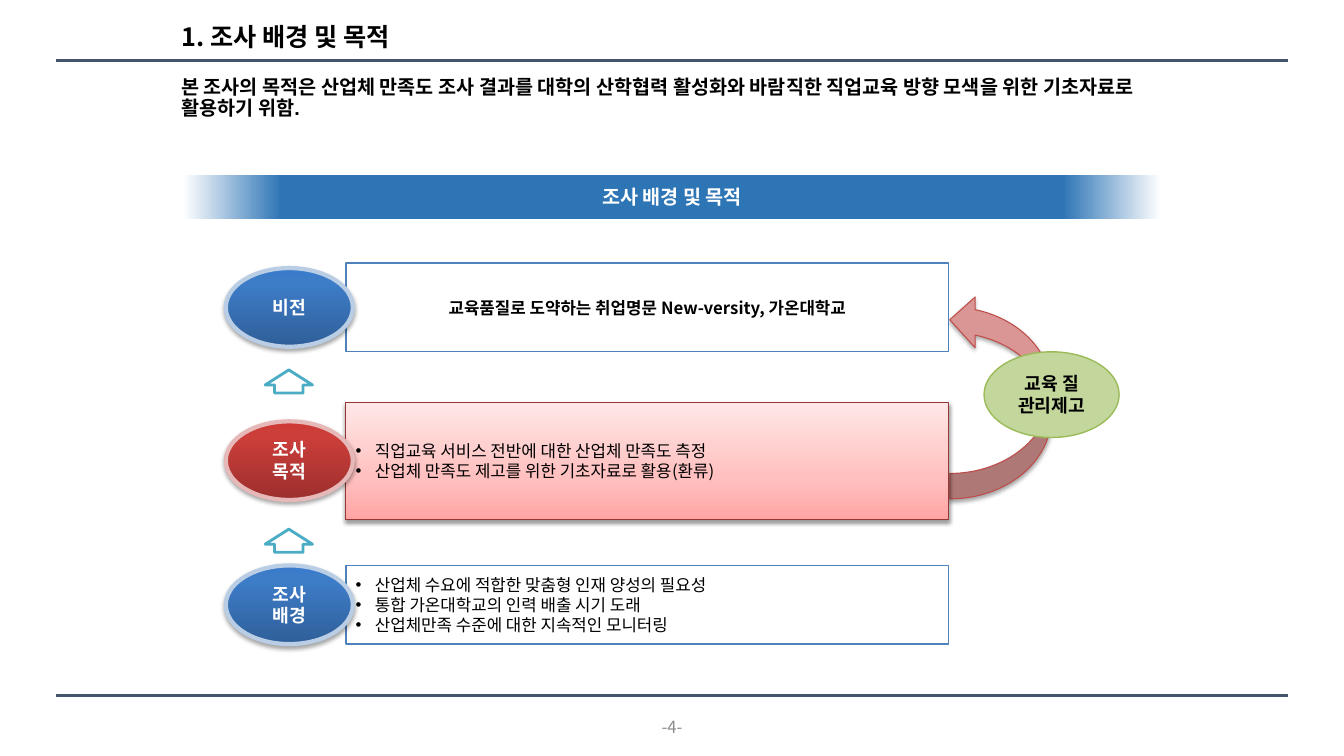
"""Build the survey background and purpose slide."""
from copy import deepcopy
from lxml import etree
from pptx import Presentation, util as u
from pptx.dml.color import RGBColor
from pptx.enum import shapes, text
from pptx.oxml.ns import qn

KIND = shapes.MSO_SHAPE
ALIGN = text.PP_ALIGN
MID = text.MSO_ANCHOR.MIDDLE
SANS = "Noto Sans CJK KR"
BLUE = "0:2F5F99 80:3D7CC7 100:3A7CCB"
RED = "0:9C2F2D 80:CB3E3A 100:CE3B37"
PINK = "0:FFA6A5 35:FFC0BF 100:FFE7E7"
FADE = "0:FFFFFF 10:2E75B6 90:2E75B6 100:FFFFFF"

deck = Presentation()
deck.slide_width, deck.slide_height = u.Inches(13.33), u.Inches(7.5)
col, row = deck.slide_width / 1333, deck.slide_height / 750
slide = deck.slides.add_slide(deck.slide_layouts[5])
items = slide.shapes


def paint(fill, hues, angle=90):
    """Fill with one hex colour, or with stops written as place:hex."""
    if ":" not in hues:
        fill.solid()
        fill.fore_color.rgb = RGBColor.from_string(hues)
        return
    fill.gradient()
    fill.gradient_angle = angle
    pairs = [stop.split(":") for stop in hues.split()]
    base = fill.gradient_stops[0]._gs
    for _ in pairs[2:]:
        base.addnext(deepcopy(base))
    for stop, (place, hue) in zip(fill.gradient_stops, pairs):
        stop.position = int(place) / 100
        stop.color.rgb = RGBColor.from_string(hue)


def write(frame, lines, size, hue="000000", bold=True, face=SANS,
          dots=False, **form):
    """Write one paragraph per line, with the given paragraph format."""
    for n, line in enumerate(lines):
        para = frame.add_paragraph() if n else frame.paragraphs[0]
        for key, value in form.items():
            setattr(para, key, value)
        run = para.add_run()
        run.text = line
        for key, value in dict(size=u.Pt(size), bold=bold, name=face).items():
            setattr(run.font, key, value)
        paint(run.font.fill, hue)
        etree.SubElement(run._r.rPr, qn("a:ea")).set("typeface", SANS)
        if dots:
            prop = para._p.get_or_add_pPr()
            prop.set("marL", str(u.Inches(0.19)))
            prop.set("indent", str(-u.Inches(0.19)))
            etree.SubElement(prop, qn("a:buFont")).set("typeface", "Arial")
            etree.SubElement(prop, qn("a:buChar")).set("char", "•")


for y in (60, 690):
    ends = [int(v) for v in (56 * col, y * row, 1277 * col, y * row)]
    rule = items.add_connector(shapes.MSO_CONNECTOR.STRAIGHT, *ends)
    paint(rule.line.fill, "44546A")
    rule.line.width = u.Pt(2)
    etree.SubElement(rule._element.spPr, qn("a:effectLst"))

title = items.title
body, page = [items.add_textbox(0, 0, 0, 0) for _ in range(2)]
places = [(title, (170, 20, 254, 37)), (body, (170, 72, 992, 53)),
          (page, (639, 706, 55, 30))]
for item, (x, y, w, h) in places:
    spots = dict(left=x * col, top=y * row, width=w * col, height=h * row)
    for key, value in spots.items():
        setattr(item, key, int(value))
    item.text_frame.word_wrap = item is not page
    item.text_frame.auto_size = text.MSO_AUTO_SIZE.NONE
title.text_frame.vertical_anchor = page.text_frame.vertical_anchor = MID
write(title.text_frame, ["1. 조사 배경 및 목적"], 18,
      alignment=ALIGN.LEFT, line_spacing=0.9)
write(body.text_frame, ["본 조사의 목적은 산업체 만족도 조사 결과를 대학의 산학협력 활성화와 "
      "바람직한 직업교육 방향 모색을 위한 기초자료로 활용하기 위함."], 14,
      face="Arial", line_spacing=0.9, space_after=u.Pt(3))
write(page.text_frame, ["-4-"], 12, "8C8C8C", False, alignment=ALIGN.CENTER)

center = dict(alignment=ALIGN.CENTER)
bullet = dict(size=12, bold=False, dots=True, alignment=ALIGN.LEFT)
label = dict(size=13, hue="FFFFFF", **center)
rows = [
    (261, 88, "FFFFFF", "4F81BD", 1, 0, BLUE, "B9CDE5", ["비전"],
     ["교육품질로 도약하는 취업명문 New-versity, 가온대학교"],
     dict(size=12, **center)),
    (399, 116, PINK, "953735", 0.75, 38, RED, "E6B9B8", ["조사", "목적"],
     ["직업교육 서비스 전반에 대한 산업체 만족도 측정",
      "산업체 만족도 제고를 위한 기초자료로 활용(환류)"], bullet),
    (561, 78, "FFFFFF", "4F81BD", 1, 0, BLUE, "B9CDE5", ["조사", "배경"],
     ["산업체 수요에 적합한 맞춤형 인재 양성의 필요성",
      "통합 가온대학교의 인력 배출 시기 도래",
      "산업체만족 수준에 대한 지속적인 모니터링"], bullet),
]
parts = [
    (KIND.CURVED_LEFT_ARROW, (942, 292, 101, 203), "D99694", "BF4C48", 0.75,
     35, [], {}),
    (KIND.OVAL, (976, 349, 134, 85), "C3D69B", "9BBB59", 1, 0,
     ["교육 질 관리제고"], dict(size=13, **center)),
    (KIND.RECTANGLE, (182, 174, 969, 43), FADE, None, 0, 0,
     ["조사 배경 및 목적"],
     dict(size=14, hue="FFFFFF", face="Arial", **center)),
]
for y, h, fill, edge, wide, dark, tone, ring, name, lines, form in rows:
    parts += [
        (KIND.RECTANGLE, (343, y, 598, h), fill, edge, wide, dark, lines, form),
        (KIND.OVAL, (224, y + h / 2 - 39, 126, 78), tone, ring, 3, 35,
         name, label)]
parts += [(KIND.UP_ARROW, (263, y, 47, 23), "FFFFFF", "4BACC6", 2, 0, [], {})
          for y in (367, 525)]

for kind, (x, y, w, h), fill, edge, wide, dark, lines, form in parts:
    box = [int(v) for v in (x * col, y * row, w * col, h * row)]
    item = items.add_shape(kind, *box)
    paint(item.fill, fill, 0 if fill == FADE else 90)
    if edge:
        paint(item.line.fill, edge)
        item.line.width = u.Pt(wide)
    else:
        item.line.fill.background()
    item.shadow.inherit = False
    if dark:
        glow = item._element.spPr.find(qn("a:effectLst"))
        shade = etree.SubElement(glow, qn("a:outerShdw"))
        cast = dict(blurRad=u.Pt(3.1), dist=u.Pt(1.8), dir=5400000,
                    rotWithShape=0)
        for key, value in cast.items():
            shade.set(key, str(value))
        tint = etree.SubElement(shade, qn("a:srgbClr"))
        tint.set("val", "000000")
        etree.SubElement(tint, qn("a:alpha")).set("val", str(dark * 1000))
    if kind == KIND.CURVED_LEFT_ARROW:
        item._element.spPr.find(qn("a:xfrm")).set("flipV", "1")
    if kind == KIND.UP_ARROW:
        item.adjustments[0], item.adjustments[1] = 0.6, 0.65
    if lines:
        item.text_frame.word_wrap = True
        item.text_frame.vertical_anchor = MID
        write(item.text_frame, lines, **form)

deck.save("out.pptx")
